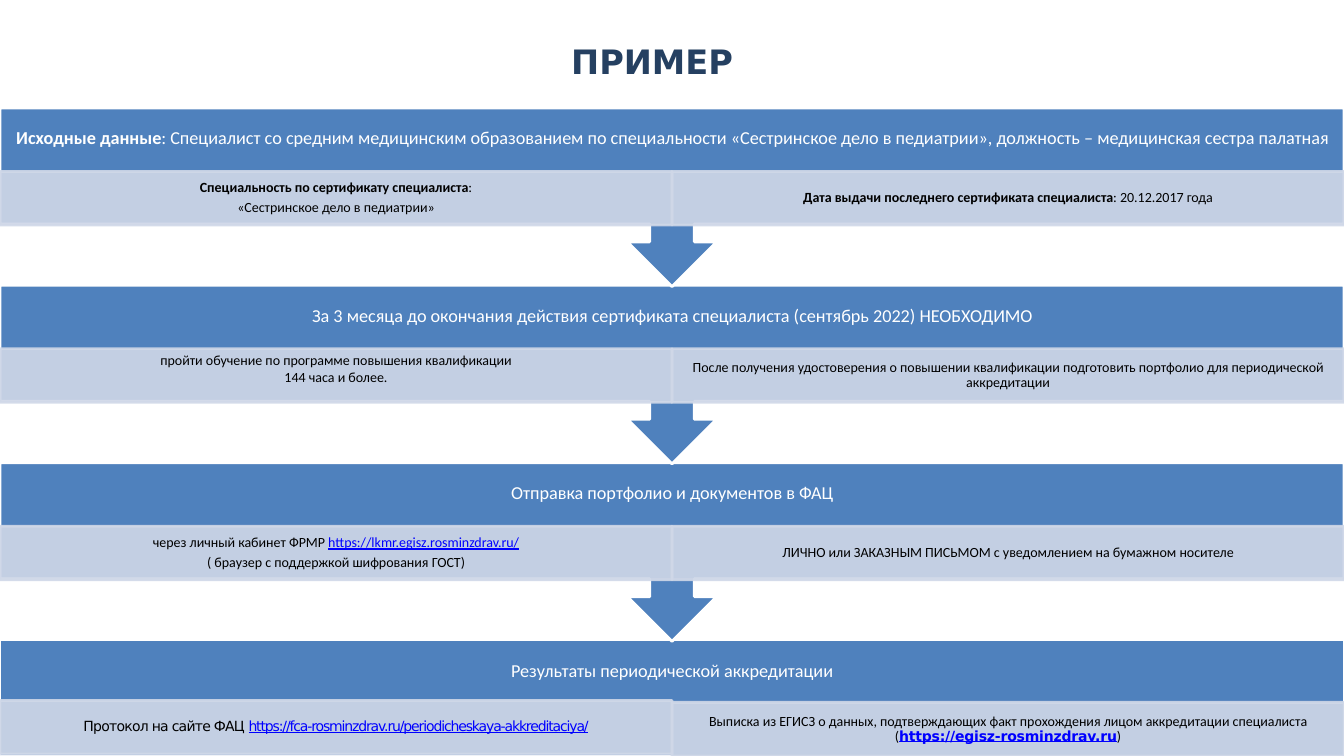
"""Build the slide with the accreditation example as a chain of steps."""
from dataclasses import dataclass, field
from typing import Any

from lxml.etree import SubElement
from pptx import Presentation
from pptx.dml.color import RGBColor
from pptx.enum.shapes import MSO_SHAPE
from pptx.enum.text import MSO_ANCHOR, PP_ALIGN
from pptx.oxml.ns import qn
from pptx.util import Cm, Length, Pt

NAVY = RGBColor(0x25, 0x40, 0x61)
BLUE = RGBColor(0x4F, 0x81, 0xBD)
PALE = RGBColor(0xD0, 0xD8, 0xE8)
WHITE = RGBColor(0xFF, 0xFF, 0xFF)
BLACK = RGBColor(0x00, 0x00, 0x00)
LINK = RGBColor(0x00, 0x00, 0xFF)

SLIDE_WIDTH, SLIDE_HEIGHT = Cm(33.88), Cm(19.05)
FIRST_TOP, STEP_PITCH = Cm(2.72), Cm(4.47)
CALLOUT_HEIGHT, LAST_HEIGHT = Cm(4.5), Cm(2.92)
HEADING_HEIGHT, DETAIL_HEIGHT = Cm(1.57), Cm(1.35)
DETAIL_WIDTH = SLIDE_WIDTH // 2

HEADING_FONT = {"name": "Calibri", "size": Pt(13)}
DETAIL_FONT = {"name": "Calibri", "size": Pt(10)}
TITLE_FONT = {"name": "DejaVu Sans", "size": Pt(24), "bold": True}
SPACED = {"alignment": PP_ALIGN.CENTER, "line_spacing": 0.9}
PLAIN = {"alignment": PP_ALIGN.CENTER, "line_spacing": 1.0}
HEADING_FRAME = {
    "word_wrap": True, "vertical_anchor": MSO_ANCHOR.MIDDLE,
    "margin_left": Cm(0.25), "margin_right": Cm(0.25),
    "margin_top": Cm(0.25), "margin_bottom": Cm(0.25),
}
DETAIL_FRAME = {
    "word_wrap": True, "vertical_anchor": MSO_ANCHOR.MIDDLE,
    "margin_left": Cm(0.2), "margin_right": Cm(0.2),
    "margin_top": Cm(0.03), "margin_bottom": Cm(0.03),
}


@dataclass
class Words:
    """A stretch of text with its own look."""

    text: str
    look: dict[str, Any] = field(default_factory=dict)
    color: RGBColor | None = None
    tracking: int = 0


@dataclass
class Detail:
    """A pale panel under a step heading."""

    lines: list[list[Words]]
    offset: Length = Cm(1.6)
    paragraph: dict[str, Any] = field(default_factory=lambda: SPACED)
    gap: Length = Pt(3.5)
    frame: dict[str, Any] = field(default_factory=dict)


@dataclass
class Step:
    """A heading with its two detail panels."""

    heading: list[Words]
    details: tuple[Detail, Detail]


BOLD = {"bold": True}
UNDERLINED = {"underline": True}
DEJAVU = {"name": "DejaVu Sans"}

STEPS = [
    Step(
        [Words("Исходные данные", BOLD),
         Words(": Специалист со средним медицинским образованием по специальности "
               "«Сестринское дело в педиатрии», должность – медицинская сестра палатная")],
        (Detail([[Words("Специальность по сертификату специалиста", BOLD), Words(":")],
                 [Words("«Сестринское дело в педиатрии»")]]),
         Detail([[Words("Дата выдачи последнего сертификата специалиста", BOLD),
                  Words(": 20.12.2017 года")]])),
    ),
    Step(
        [Words("За 3 месяца до окончания действия сертификата специалиста "
               "(сентябрь 2022) НЕОБХОДИМО")],
        (Detail([[Words("пройти обучение по программе повышения квалификации")],
                 [Words("144 часа и более.")]],
                paragraph=PLAIN, gap=Pt(0), frame={"margin_bottom": Cm(0.4)}),
         Detail([[Words("После получения удостоверения о повышении квалификации "
                        "подготовить портфолио для периодической аккредитации")]])),
    ),
    Step(
        [Words("Отправка портфолио и документов в ФАЦ")],
        (Detail([[Words("через личный кабинет ФРМР "),
                  Words("https://lkmr.egisz.rosminzdrav.ru/", UNDERLINED, LINK)],
                 [Words("( браузер с поддержкой шифрования ГОСТ)")]]),
         Detail([[Words("ЛИЧНО или ЗАКАЗНЫМ ПИСЬМОМ с уведомлением на бумажном носителе")]])),
    ),
    Step(
        [Words("Результаты периодической аккредитации")],
        (Detail([[Words("Протокол на сайте ФАЦ ", DEJAVU, tracking=-50),
                  Words("https://fca-rosminzdrav.ru/periodicheskaya-akkreditaciya/",
                        DEJAVU | UNDERLINED, LINK, -80)]], offset=Cm(1.52)),
         Detail([[Words("Выписка из ЕГИСЗ о данных, подтверждающих факт прохождения "
                        "лицом аккредитации специалиста ("),
                  Words("https://egisz-rosminzdrav.ru",
                        DEJAVU | BOLD | UNDERLINED, LINK, -10),
                  Words(")")]], offset=Cm(1.57))),
    ),
]


def apply(target: Any, values: dict[str, Any]) -> None:
    """Set every attribute listed in the format values."""
    for name, value in values.items():
        setattr(target, name, value)


def write(frame: Any, lines: list[list[Words]], font: dict[str, Any], color: RGBColor,
          paragraph_format: dict[str, Any], gap: Length = Pt(0)) -> None:
    """Write lines of words, with a gap between the lines."""
    for index, line in enumerate(lines):
        paragraph = frame.add_paragraph() if index else frame.paragraphs[0]
        apply(paragraph, paragraph_format)
        paragraph.space_after = gap if index < len(lines) - 1 else Pt(0)
        for words in line:
            run = paragraph.add_run()
            run.text = words.text
            apply(run.font, font | words.look)
            run.font.color.rgb = words.color or color
            if words.tracking:
                run._r.get_or_add_rPr().set("spc", str(words.tracking))


def add_block(slide: Any, kind: MSO_SHAPE, left: Length, top: Length, width: Length,
              height: Length, fill: RGBColor, outline: RGBColor) -> Any:
    """Add a filled and outlined shape without a shadow."""
    block = slide.shapes.add_shape(kind, left, top, width, height)
    block.shadow.inherit = False
    block.fill.solid()
    block.fill.fore_color.rgb = fill
    block.line.color.rgb = outline
    block.line.width = Pt(2)
    return block


def add_detail(slide: Any, detail: Detail, left: Length, step_top: Length) -> None:
    """Add a slightly transparent panel with its text."""
    panel = add_block(slide, MSO_SHAPE.RECTANGLE, left, step_top + detail.offset,
                      DETAIL_WIDTH, DETAIL_HEIGHT, PALE, PALE)
    for tint in panel._element.spPr.iter(qn("a:srgbClr")):
        SubElement(tint, qn("a:alpha")).set("val", "90000")
    apply(panel.text_frame, DETAIL_FRAME | detail.frame)
    write(panel.text_frame, detail.lines, DETAIL_FONT, BLACK, detail.paragraph, detail.gap)


def add_step(slide: Any, step: Step, top: Length, is_last: bool) -> None:
    """Add a step band, its heading and its panels."""
    if is_last:
        add_block(slide, MSO_SHAPE.RECTANGLE, Cm(0), top, SLIDE_WIDTH, LAST_HEIGHT, BLUE, WHITE)
    else:
        callout = add_block(slide, MSO_SHAPE.UP_ARROW_CALLOUT, Cm(0), top,
                            SLIDE_WIDTH, CALLOUT_HEIGHT, BLUE, WHITE)
        callout.rotation = 180
    heading = slide.shapes.add_textbox(Cm(0), top, SLIDE_WIDTH, HEADING_HEIGHT)
    apply(heading.text_frame, HEADING_FRAME)
    write(heading.text_frame, [step.heading], HEADING_FONT, WHITE, SPACED)
    for column, detail in enumerate(step.details):
        add_detail(slide, detail, column * DETAIL_WIDTH, top)


def main() -> None:
    """Create and save the presentation."""
    presentation = Presentation()
    apply(presentation, {"slide_width": SLIDE_WIDTH, "slide_height": SLIDE_HEIGHT})
    slide = presentation.slides.add_slide(presentation.slide_layouts[6])
    title = slide.shapes.add_textbox(Cm(14.15), Cm(0.91), Cm(5.59), Cm(1.27))
    write(title.text_frame, [[Words("ПРИМЕР")]], TITLE_FONT, NAVY,
          {"alignment": PP_ALIGN.LEFT})
    title.text_frame.word_wrap = True
    for index, step in reversed(list(enumerate(STEPS))):
        add_step(slide, step, FIRST_TOP + index * STEP_PITCH, index == len(STEPS) - 1)
    presentation.save("out.pptx")


if __name__ == "__main__":
    main()
